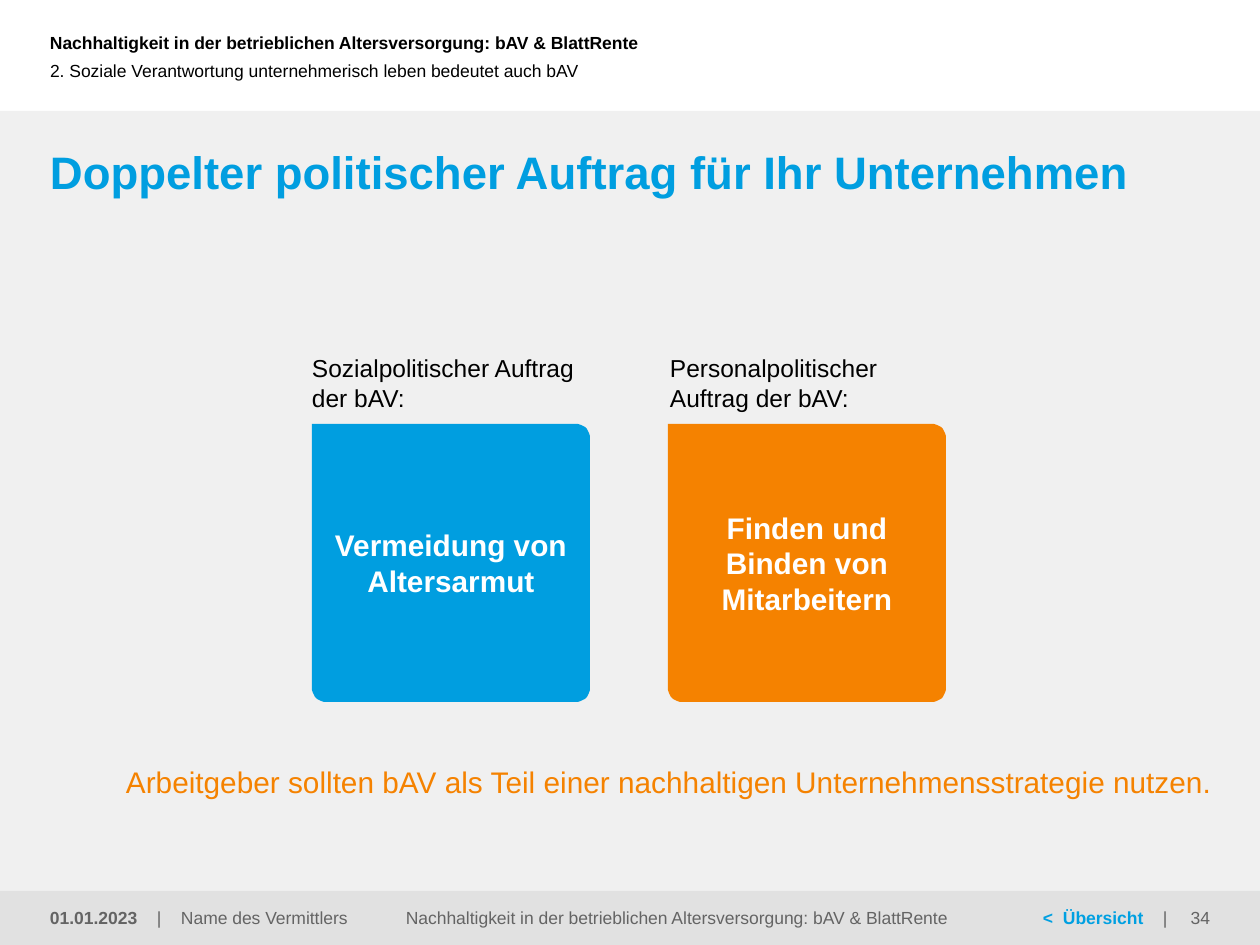
"""Build the slide on the double political mandate of company pensions."""
import math

import pptx
import pptx.dml.color
import pptx.enum.shapes
import pptx.enum.text
import pptx.oxml.ns
import pptx.util
from lxml import etree

SCALE = 914400 / 126
BLUE, ORANGE, GREY = "009EE0", "F58200", "646464"
ALIGN = pptx.enum.text.PP_ALIGN
ANCHOR = pptx.enum.text.MSO_ANCHOR


def rgb(color):
    return pptx.dml.color.RGBColor.from_string(color)


def write(sp, text, size, color, bold=False, align=ALIGN.LEFT, anchor=ANCHOR.MIDDLE,
          inset=(0, 0), tabs=()):
    tf = sp.text_frame
    tf.word_wrap = True
    tf.vertical_anchor = anchor
    tf.margin_left, tf.margin_right = [round(v * SCALE) for v in inset]
    tf.margin_top = tf.margin_bottom = 0
    p = tf.paragraphs[0]
    p.alignment = align
    if tabs:
        tab_list = etree.SubElement(p._p.get_or_add_pPr(), pptx.oxml.ns.qn("a:tabLst"))
        for pos in tabs:
            etree.SubElement(tab_list, pptx.oxml.ns.qn("a:tab"),
                             pos=str(round(pos * SCALE)), algn="l")
    p.font.name, p.font.size, p.font.bold = "Arial", pptx.util.Pt(size), bold
    p.font.color.rgb = rgb(color)
    p.add_run().text = text
    return p


prs = pptx.Presentation()
prs.slide_width, prs.slide_height = pptx.util.Inches(10), pptx.util.Inches(7.5)
s = prs.slides.add_slide(prs.slide_layouts[6])

for top, height, color in [(111, 834, "F0F0F0"), (891, 54, "E1E1E1")]:
    sp = s.shapes.add_shape(pptx.enum.shapes.MSO_SHAPE.RECTANGLE,
                            *[round(v * SCALE) for v in (0, top, 1260, height)])
    sp.shadow.inherit = False
    sp.fill.solid()
    sp.fill.fore_color.rgb = rgb(color)
    sp.line.fill.background()

course = "Nachhaltigkeit in der betrieblichen Altersversorgung: bAV & BlattRente"
texts = [
    ((0, 0, 880, 85), course, 10, "000000", {"bold": True, "inset": (50, 13)}),
    ((0, 30, 901, 80), "2. Soziale Verantwortung unternehmerisch leben bedeutet auch bAV",
     10, "000000", {"inset": (50, 0)}),
    ((50, 144, 1162, 69), "Doppelter politischer Auftrag für Ihr Unternehmen", 26, BLUE,
     {"bold": True, "anchor": ANCHOR.TOP}),
    ((126, 742, 1095, 80),
     "Arbeitgeber sollten bAV als Teil einer nachhaltigen Unternehmensstrategie nutzen.",
     17, ORANGE, {}),
    ((0, 890, 154, 54), "01.01.2023", 10, GREY, {"bold": True, "inset": (50, 13)}),
    ((157, 890, 305, 54), "|\tName des Vermittlers", 10, GREY, {"tabs": (24,)}),
    ((374, 890, 605, 54), course, 10, GREY, {"align": ALIGN.CENTER}),
    ((1142, 890, 118, 54), "34", 10, GREY, {"align": ALIGN.RIGHT, "inset": (13, 50)}),
]
for box, text, size, color, options in texts:
    sp = s.shapes.add_textbox(*[round(v * SCALE) for v in box])
    write(sp, text, size, color, **options)

sp = s.shapes.add_textbox(*[round(v * SCALE) for v in (1043, 890, 128, 54)])
p = write(sp, "<\tÜbersicht", 10, GREY, tabs=(20, 120))
r = p.runs[0]
r.font.bold = True
r.font.color.rgb = rgb("00A0E1")
p.add_run().text = "\t|"

cards = [
    (312, 312, BLUE, "Sozialpolitischer Auftrag der bAV:", "Vermeidung von Altersarmut"),
    (668, 670, ORANGE, "Personalpolitischer Auftrag der bAV:",
     "Finden und Binden von Mitarbeitern"),
]
top, side, radius = 424, 278, 14
for left, label_left, color, label, text in cards:
    near, far = radius, side - radius
    points = []
    for cx, cy, start in [(far, near, -90), (far, far, 0), (near, far, 90)]:
        for angle in range(start, start + 91, 10):
            points.append((left + cx + radius * math.cos(math.radians(angle)),
                           top + cy + radius * math.sin(math.radians(angle))))
    outline = s.shapes.build_freeform(left, top, scale=SCALE)
    outline.add_line_segments(points, close=True)
    sp = outline.convert_to_shape()
    sp.shadow.inherit = False
    sp.fill.solid()
    sp.fill.fore_color.rgb = rgb(color)
    sp.line.fill.background()
    write(sp, text, 17, "FFFFFF", bold=True, align=ALIGN.CENTER, inset=(13, 13))
    sp = s.shapes.add_textbox(*[round(v * SCALE) for v in (label_left, 353, side, 59)])
    write(sp, label, 14, "000000", anchor=ANCHOR.BOTTOM)

prs.save("out.pptx")
